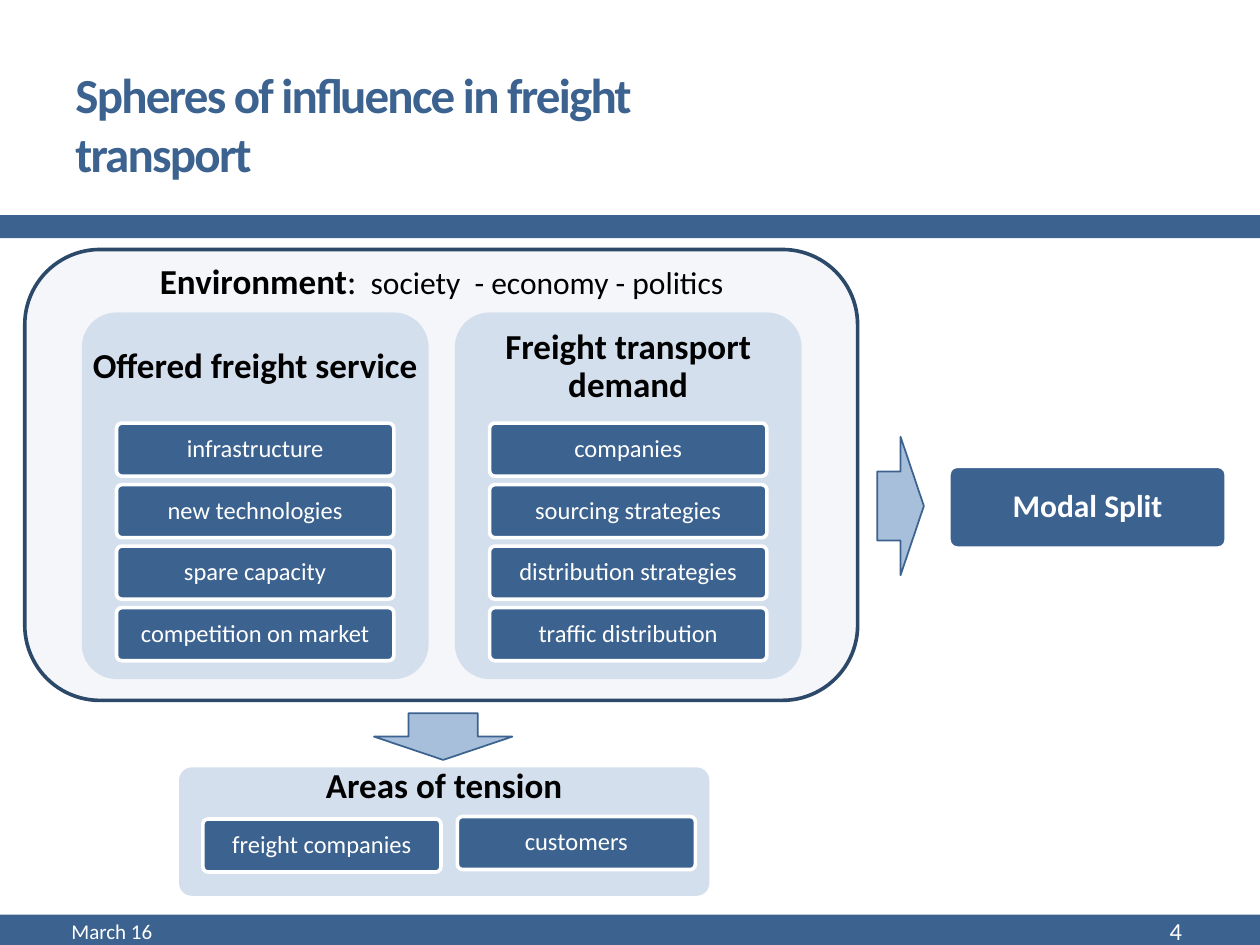
from dataclasses import dataclass

from lxml.etree import SubElement
from pptx import Presentation
from pptx.dml.color import RGBColor
from pptx.enum.shapes import MSO_SHAPE
from pptx.enum.text import MSO_ANCHOR, PP_ALIGN
from pptx.oxml.ns import qn
from pptx.util import Cm, Pt


@dataclass(frozen=True)
class Theme:
    font: str = "Calibri"
    blue: str = "3C628F"
    navy: str = "2C496A"
    pale: str = "D4DFED"
    arrow: str = "A8BFDB"
    white: str = "FFFFFF"
    black: str = "000000"
    title_size: int = 28
    heading_size: int = 20
    lead_size: int = 18
    card_size: int = 14
    date_size: int = 12
    card_line: float = 2.08


THEME = Theme()

PANELS = [
    ("Offered freight service",
     ["infrastructure", "new technologies", "spare capacity", "competition on market"]),
    ("Freight transport demand",
     ["companies", "sourcing strategies", "distribution strategies", "traffic distribution"]),
]
PANEL_LEFT, PANEL_TOP, PANEL_WIDTH, PANEL_HEIGHT, PANEL_STEP = 1.65, 6.3, 6.99, 7.39, 7.52
CARD_INDENT, CARD_TOP, CARD_WIDTH, CARD_HEIGHT, CARD_STEP = 0.7, 8.53, 5.59, 1.07, 1.24


def place(part, left, top, width, height):
    part.left, part.top, part.width, part.height = Cm(left), Cm(top), Cm(width), Cm(height)


def write(frame, text, *, size, color, bold=False, align=PP_ALIGN.LEFT,
          anchor=MSO_ANCHOR.MIDDLE, inset=(0.25, 0.13), leading=None, tracking=None):
    """Add one formatted run to the last paragraph of a text frame."""
    frame.word_wrap = True
    frame.vertical_anchor = anchor
    frame.margin_left = frame.margin_right = Cm(inset[0])
    frame.margin_top = frame.margin_bottom = Cm(inset[1])
    paragraph = frame.paragraphs[-1]
    paragraph.alignment = align
    if leading:
        paragraph.line_spacing = leading
    run = paragraph.add_run()
    run.text = text
    run.font.name = THEME.font
    run.font.size = Pt(size)
    run.font.bold = bold
    run.font.color.rgb = RGBColor.from_string(color)
    if tracking:
        run.font._element.set("spc", str(tracking))


def add_block(slide, kind, box, fill, *, line=None, line_width=1, corner=None, opacity=None):
    block = slide.shapes.add_shape(kind, *map(Cm, box))
    block.shadow.inherit = False
    block.fill.solid()
    block.fill.fore_color.rgb = RGBColor.from_string(fill)
    if opacity:
        color = block.fill._xPr.find(qn("a:solidFill"))[0]
        SubElement(color, qn("a:alpha"), val=str(opacity * 1000))
    if line:
        block.line.color.rgb = RGBColor.from_string(line)
        block.line.width = Pt(line_width)
    else:
        block.line.fill.background()
    if corner:
        block.adjustments[0] = corner
    return block


def add_label(slide, box, text, **text_format):
    label = slide.shapes.add_textbox(*map(Cm, box))
    write(label.text_frame, text, **text_format)
    return label


def add_card(slide, box, text, size=THEME.card_size, bold=False):
    card = add_block(slide, MSO_SHAPE.ROUNDED_RECTANGLE, box, THEME.blue,
                     line=THEME.white, line_width=THEME.card_line, corner=0.1)
    write(card.text_frame, text, size=size, bold=bold, color=THEME.white,
          align=PP_ALIGN.CENTER, inset=(0.1, 0.08), leading=0.9)


def add_panel(slide, box, heading, heading_height):
    add_block(slide, MSO_SHAPE.ROUNDED_RECTANGLE, box, THEME.pale, corner=0.1)
    add_label(slide, (*box[:3], heading_height), heading, size=THEME.heading_size,
              bold=True, color=THEME.black, align=PP_ALIGN.CENTER,
              inset=(0.2, 0.2), leading=0.9)


def add_arrow(slide, box, rotation=0):
    arrow = add_block(slide, MSO_SHAPE.DOWN_ARROW, box, THEME.arrow, line=THEME.blue)
    arrow.rotation = rotation


def add_frame(slide):
    """Title, rule under it and footer."""
    for top, height in ((18.44, 0.61), (4.34, 0.46)):
        add_block(slide, MSO_SHAPE.RECTANGLE, (0, top, 25.4, height), THEME.blue)
    title = slide.shapes.title
    place(title, 1.27, 1.12, 13.23, 2.74)
    write(title.text_frame, "Spheres of influence in freight transport",
          size=THEME.title_size, bold=True, color=THEME.blue, tracking=-100)
    add_label(slide, (1.19, 18.31, 8.05, 0.91), "March 16",
              size=THEME.date_size, color=THEME.white)
    add_label(slide, (21.11, 18.31, 2.97, 0.91), "4",
              size=THEME.card_size, color=THEME.white, align=PP_ALIGN.RIGHT)


def add_environment(slide):
    add_block(slide, MSO_SHAPE.ROUNDED_RECTANGLE, (0.5, 5.03, 16.79, 9.09), THEME.pale,
              line=THEME.navy, line_width=THEME.card_line, opacity=25)
    lead = dict(color=THEME.black, align=PP_ALIGN.CENTER, anchor=MSO_ANCHOR.TOP)
    label = add_label(slide, (1.5, 5.11, 14.81, 1.12), "Environment",
                      size=THEME.heading_size, bold=True, **lead)
    write(label.text_frame, ":", size=THEME.heading_size, **lead)
    write(label.text_frame, "  society  - economy - politics", size=THEME.lead_size, **lead)

    for column, (heading, factors) in enumerate(PANELS):
        left = PANEL_LEFT + column * PANEL_STEP
        add_panel(slide, (left, PANEL_TOP, PANEL_WIDTH, PANEL_HEIGHT), heading, 2.21)
        for row, factor in enumerate(factors):
            top = CARD_TOP + row * CARD_STEP
            add_card(slide, (left + CARD_INDENT, top, CARD_WIDTH, CARD_HEIGHT), factor)


def add_outcomes(slide):
    # Areas of tension, below the environment
    add_arrow(slide, (7.54, 14.38, 2.79, 0.94))
    add_panel(slide, (3.61, 15.47, 10.69, 2.59), "Areas of tension", 0.79)
    add_card(slide, (4.09, 16.51, 4.8, CARD_HEIGHT), "freight companies")
    add_card(slide, (9.22, 16.46, 4.8, CARD_HEIGHT), "customers")
    # Modal split, to the right of the environment
    add_arrow(slide, (16.76, 9.73, 2.79, 0.94), rotation=270)
    add_card(slide, (19.13, 9.4, CARD_WIDTH, 1.65), "Modal Split",
             size=THEME.lead_size, bold=True)


def main():
    presentation = Presentation()
    presentation.slide_width, presentation.slide_height = Cm(25.4), Cm(19.05)
    slide = presentation.slides.add_slide(presentation.slide_layouts.get_by_name("Title Only"))
    add_frame(slide)
    add_environment(slide)
    add_outcomes(slide)
    presentation.save("out.pptx")


if __name__ == "__main__":
    main()
